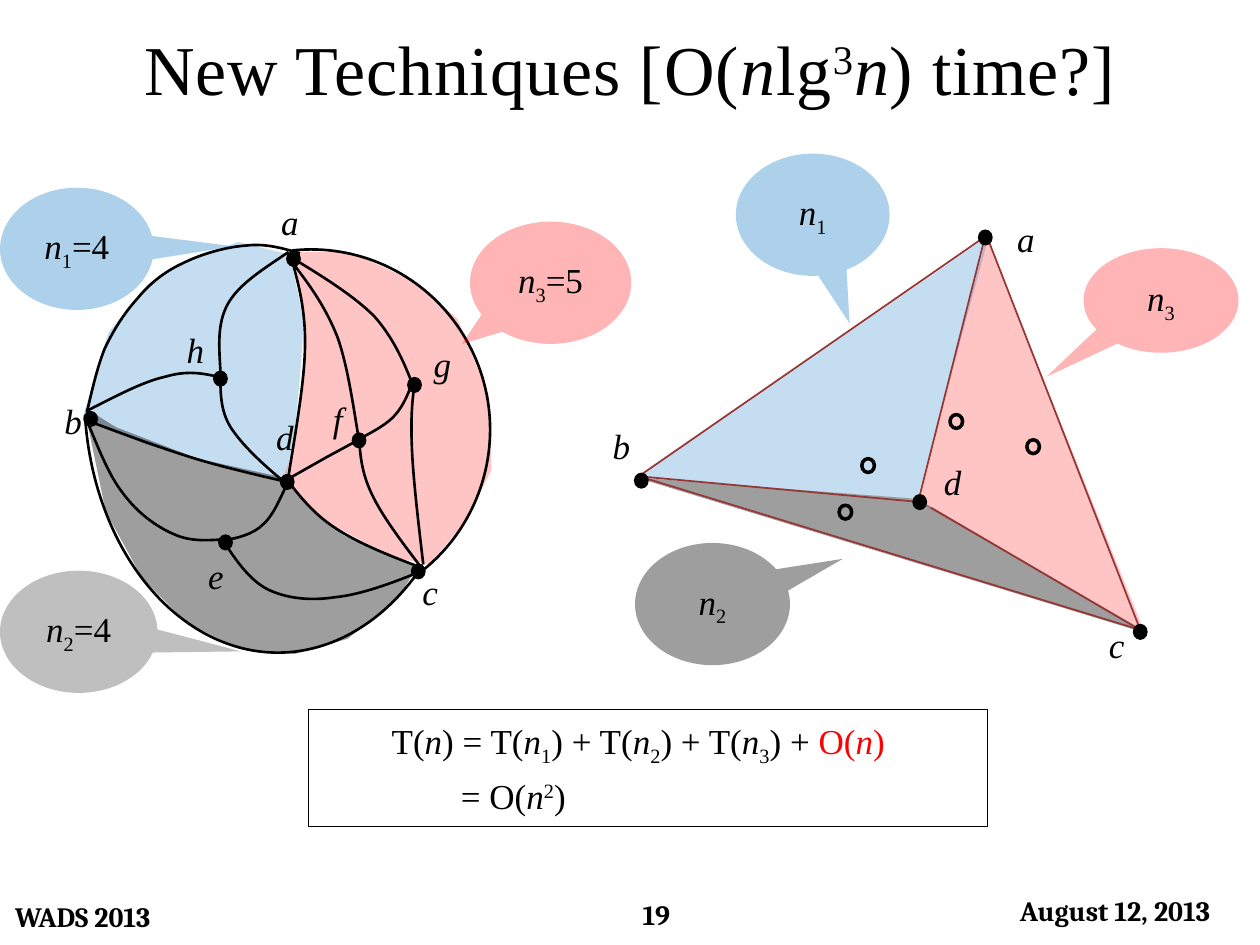
from dataclasses import dataclass
from typing import NamedTuple

from lxml import etree
from pptx import Presentation, util as u
from pptx.dml import color
from pptx.enum import shapes, text
from pptx.oxml import ns

COLORS = {"black": "000000", "red": "FF0000", "blue": "0070C0",
          "silver": "BFBFBF", "edge": "953735"}
SERIF = "Times New Roman"
DOT_WIDTH, DOT_HEIGHT = 0.1, 0.11
LABEL_SIZE = 0.19


class Run(NamedTuple):
    text: str
    italic: bool = False
    baseline: int = 0
    color: str = "black"


@dataclass
class Region:
    color: str
    opacity: int
    points: list


@dataclass
class Callout:
    box: tuple
    tail: tuple
    color: str
    opacity: int
    index: str
    count: str = ""


@dataclass
class Arc:
    box: tuple
    angles: tuple


def rgb(name: str) -> color.RGBColor:
    return color.RGBColor.from_string(COLORS[name])


def inches(values) -> list:
    return [u.Inches(value) for value in values]


def add_runs(paragraph, runs, size=20, font=SERIF, bold=False, spacing=0) -> None:
    for item in runs:
        run = paragraph.add_run()
        run.text = item.text
        run.font.size, run.font.name = u.Pt(size), font
        run.font.bold, run.font.italic = bold, item.italic
        run.font.color.rgb = rgb(item.color)
        properties = run._r.get_or_add_rPr()
        if item.baseline:
            properties.set("baseline", str(item.baseline * 1000))
        if spacing:
            properties.set("spc", str(spacing))


def variable(index: str) -> list:
    return [Run("n", True), Run(index, baseline=-25)]


def style(shape, fill=None, opacity=100, line=None, width=1.0) -> None:
    shape.shadow.inherit = False
    if fill:
        shape.fill.solid()
        shape.fill.fore_color.rgb = rgb(fill)
        if opacity < 100:
            solid = shape._element.spPr.find(ns.qn("a:solidFill"))
            etree.SubElement(solid[0], ns.qn("a:alpha"), val=str(opacity * 1000))
    else:
        shape.fill.background()
    if line:
        shape.line.color.rgb = rgb(line)
        shape.line.width = u.Pt(width)
    else:
        shape.line.fill.background()


def add_preset(slide, kind, box, **look):
    shape = slide.shapes.add_shape(kind, *inches(box))
    style(shape, **look)
    shape.text_frame.vertical_anchor = text.MSO_ANCHOR.MIDDLE
    return shape


def add_path(slide, points, closed=False, **look):
    start, *others = [inches(point) for point in points]
    builder = slide.shapes.build_freeform(*start)
    builder.add_line_segments(others, close=closed)
    shape = builder.convert_to_shape()
    style(shape, **look)
    return shape


def add_curve(slide, points) -> None:
    shape = add_path(slide, points, line="black", width=1.5)
    segments = list(shape._element.iter(ns.qn("a:lnTo")))
    for first in range(0, len(segments), 3):
        group = segments[first:first + 3]
        bezier = etree.Element(ns.qn("a:cubicBezTo"))
        group[0].addprevious(bezier)
        for segment in group:
            bezier.append(segment[0])
            segment.getparent().remove(segment)


def add_edge(slide, start, end) -> None:
    connector = slide.shapes.add_connector(
        shapes.MSO_CONNECTOR.STRAIGHT, *inches(start + end))
    connector.line.color.rgb = rgb("edge")
    connector.line.width = u.Pt(1)
    etree.SubElement(connector._element.spPr, ns.qn("a:effectLst"))


def add_dot(slide, position, hollow=False) -> None:
    add_preset(slide, shapes.MSO_SHAPE.OVAL, position + (DOT_WIDTH, DOT_HEIGHT),
               fill=None if hollow else "black", line="black",
               width=2 if hollow else 1.25)


def add_label(slide, letter, position) -> None:
    box = slide.shapes.add_textbox(*inches(position + (LABEL_SIZE, LABEL_SIZE)))
    frame = box.text_frame
    frame.word_wrap = True
    frame.vertical_anchor = text.MSO_ANCHOR.MIDDLE
    frame.paragraphs[0].alignment = text.PP_ALIGN.CENTER
    add_runs(frame.paragraphs[0], [Run(letter, True)])


def add_callout(slide, callout: Callout) -> None:
    shape = add_preset(slide, shapes.MSO_SHAPE.OVAL_CALLOUT, callout.box,
                       fill=callout.color, opacity=callout.opacity)
    shape.adjustments[0], shape.adjustments[1] = callout.tail
    paragraph = shape.text_frame.paragraphs[0]
    paragraph.alignment = text.PP_ALIGN.CENTER
    add_runs(paragraph, variable(callout.index))
    if callout.count:
        add_runs(paragraph, [Run(callout.count)])


def add_footer(slide, words, box, alignment) -> None:
    shape = add_preset(slide, shapes.MSO_SHAPE.ROUNDED_RECTANGLE, box)
    paragraph = shape.text_frame.paragraphs[0]
    paragraph.alignment = alignment
    add_runs(paragraph, [Run(words)], size=16, font="Cambria", bold=True)


A, B, C, D = (7.83, 1.87), (5.07, 3.78), (9.05, 5), (7.28, 3.96)
REGIONS = [
    Region("red", 23, [(7.28, 3.98), (9.08, 5.01), (7.83, 1.88)]),
    Region("blue", 23, [D, (5.06, 3.79), (7.85, 1.87)]),
    Region("black", 38, [D, (5.05, 3.79), (9.08, 5.02), (9.05, 4.99)]),
    Region("blue", 23, [(2.26, 3.82), (1.16, 3.53), (0.66, 3.3), (0.86, 2.64), (1.18, 2.25),
                        (1.52, 2.06), (1.89, 1.92), (2.3, 2.02), (2.41, 2.54), (2.39, 2.89),
                        (2.34, 3.43)]),
    Region("red", 23, [(2.25, 3.79), (2.54, 4.11), (3.1, 4.42), (3.41, 4.48), (3.7, 4.13),
                       (3.9, 3.73), (3.88, 3.14), (3.63, 2.53), (3.28, 2.23), (2.78, 2),
                       (2.34, 2), (2.38, 2.33), (2.43, 2.67), (2.34, 3.53)]),
    Region("black", 38, [(2.25, 3.79), (2.43, 4), (2.73, 4.25), (3.31, 4.5), (3.17, 4.73),
                         (2.76, 5.07), (2.34, 5.19), (1.9, 5.15), (1.48, 4.94), (1.13, 4.59),
                         (0.84, 4.06), (0.68, 3.29), (0.68, 3.24), (0.92, 3.39), (1.57, 3.64)]),
]
CURVES = [
    [(0.7, 3.34), (0.99, 3.45), (1.29, 3.56), (1.55, 3.64), (1.81, 3.72), (2.26, 3.82), (2.26, 3.82)],
    [(2.33, 2.11), (2.38, 2.3), (2.43, 2.5), (2.42, 2.79), (2.41, 3.08), (2.34, 3.46), (2.28, 3.84)],
    [(2.28, 3.81), (2.38, 3.94), (2.49, 4.08), (2.66, 4.19), (2.84, 4.31), (3.09, 4.41), (3.33, 4.5)],
    [(0.69, 3.27), (0.73, 3.1), (0.77, 2.92), (0.83, 2.77), (0.9, 2.62), (0.99, 2.48), (1.09, 2.37),
     (1.19, 2.25), (1.3, 2.16), (1.45, 2.09), (1.59, 2.02), (1.79, 1.96), (1.95, 1.95),
     (2.1, 1.93), (2.24, 1.97), (2.38, 2.01)],
    [(1.77, 4.29), (1.89, 4.27), (2.01, 4.24), (2.09, 4.16), (2.17, 4.09), (2.22, 3.96), (2.28, 3.84)],
    [(0.69, 3.34), (0.78, 3.55), (0.86, 3.77), (0.98, 3.92), (1.09, 4.07), (1.24, 4.18), (1.38, 4.24),
     (1.51, 4.3), (1.65, 4.29), (1.79, 4.28)],
    [(1.79, 4.32), (1.89, 4.47), (1.99, 4.61), (2.13, 4.68), (2.28, 4.75), (2.46, 4.77), (2.66, 4.74),
     (2.86, 4.72), (3.11, 4.63), (3.35, 4.53)],
    [(1.75, 2.99), (1.75, 3.12), (1.75, 3.26), (1.83, 3.39), (1.92, 3.53), (2.08, 3.68), (2.25, 3.82)],
    [(1.75, 2.95), (1.74, 2.76), (1.72, 2.57), (1.81, 2.41), (1.9, 2.25), (2.1, 2.13), (2.29, 2)],
    [(1.73, 2.99), (1.6, 2.96), (1.48, 2.94), (1.31, 2.99), (1.13, 3.03), (0.91, 3.15), (0.69, 3.26)],
    [(2.34, 2.11), (2.47, 2.28), (2.59, 2.45), (2.68, 2.68), (2.76, 2.91), (2.8, 3.2), (2.85, 3.5)],
    [(2.85, 3.48), (2.86, 3.62), (2.87, 3.75), (2.95, 3.92), (3.03, 4.09), (3.18, 4.29), (3.34, 4.5)],
    [(3.27, 3.04), (3.2, 2.86), (3.12, 2.68), (2.97, 2.51), (2.81, 2.35), (2.57, 2.2), (2.34, 2.06)],
    [(2.86, 3.48), (2.97, 3.42), (3.07, 3.37), (3.14, 3.29), (3.2, 3.22), (3.24, 3.13), (3.27, 3.04)],
    [(3.29, 3.06), (3.27, 3.19), (3.26, 3.33), (3.27, 3.56), (3.28, 3.8), (3.32, 4.14), (3.36, 4.48)],
]
ARCS = [Arc((1.05, 1.98, 2.84, 2.86), (158.4, 32.04)),
        Arc((0.67, 1.08, 3.07, 4.1), (31.96, 104.21))]
EDGES = [(B, (7.25, 3.98)), (C, (7.39, 4.03)), ((7.3, 3.93), (7.83, 1.83))]
DOTS = [(3.27, 4.48), (1.74, 4.25), (2.23, 3.77), (2.28, 2), (0.67, 3.27), (2.8, 3.44), (3.24, 3),
        (1.7, 2.95), (5.04, 3.76), (7.77, 1.83), (9, 4.96), (7.25, 3.93)]
RINGS = [(6.84, 3.64), (8.15, 3.49), (6.66, 4.01), (7.54, 3.29)]
LABELS = [("a", (2.14, 1.66)), ("b", (0.42, 3.24)), ("c", (3.26, 4.6)), ("d", (2.1, 3.37)),
          ("e", (1.56, 4.47)), ("f", (2.55, 3.23)), ("g", (3.35, 2.79)), ("h", (1.39, 2.68)),
          ("a", (7.98, 1.8)), ("b", (4.77, 3.44)), ("c", (8.71, 5.02)), ("d", (7.4, 3.73))]
CALLOUTS = [
    Callout((5.84, 1.22, 1.22, 0.97), (0.24, 0.89), "blue", 32, "1"),
    Callout((5.04, 4.31, 1.23, 0.97), (0.84, -0.37), "black", 38, "2"),
    Callout((8.6, 1.97, 1.23, 0.83), (-0.74, 0.73), "red", 29, "3"),
    Callout((0, 1.49, 1.22, 0.97), (1.02, -0.02), "blue", 32, "1", "=4"),
    Callout((0, 4.53, 1.25, 0.97), (1.03, 0.16), "silver", 100, "2", "=4"),
    Callout((3.73, 1.76, 1.28, 0.97), (-0.55, 0.5), "red", 29, "3", "=5"),
]
FOOTERS = [("19", (4.18, 7.08, 2.06, 0.35), text.PP_ALIGN.CENTER),
           ("WADS 2013", (0, 7.05, 3.97, 0.45), text.PP_ALIGN.LEFT),
           ("August 12, 2013", (7.7, 7.05, 2.3, 0.35), text.PP_ALIGN.CENTER)]
TITLE = [Run("New Techniques [O("), Run("n", True), Run("lg"), Run("3", baseline=30),
         Run("n", True), Run(") time?]")]
RECURRENCE = [
    (0.56, [Run("T("), Run("n", True), Run(") = T("), *variable("1"), Run(") + T("), *variable("2"),
            Run(") + T("), *variable("3"), Run(") +"), Run(" O(", color="red"),
            Run("n", True, color="red"), Run(")", color="red")]),
    (1.11, [Run("= O("), Run("n", True), Run("2", baseline=30), Run(")")]),
]


def add_title(slide) -> None:
    title = slide.shapes.title
    title.left, title.top, title.width, title.height = inches((0, 0.15, 10, 0.77))
    title.text_frame.vertical_anchor = text.MSO_ANCHOR.MIDDLE
    title.text_frame.paragraphs[0].alignment = text.PP_ALIGN.CENTER
    add_runs(title.text_frame.paragraphs[0], TITLE, size=40, spacing=50)


def add_recurrence(slide) -> None:
    box = add_preset(slide, shapes.MSO_SHAPE.RECTANGLE, (2.45, 5.63, 5.39, 0.93),
                     line="black", width=0.75)
    frame = box.text_frame
    for number, (indent, runs) in enumerate(RECURRENCE):
        paragraph = frame.add_paragraph() if number else frame.paragraphs[0]
        paragraph.alignment = text.PP_ALIGN.LEFT
        paragraph.space_before = u.Pt(4)
        paragraph._p.get_or_add_pPr().set("marL", str(u.Inches(indent)))
        add_runs(paragraph, runs)


def main() -> None:
    presentation = Presentation()
    presentation.slide_width, presentation.slide_height = inches((10, 7.5))
    slide = presentation.slides.add_slide(presentation.slide_layouts[5])
    add_title(slide)
    for footer in FOOTERS:
        add_footer(slide, *footer)
    for region in REGIONS:
        add_path(slide, region.points, True, fill=region.color, opacity=region.opacity)
    for curve in CURVES:
        add_curve(slide, curve)
    add_path(slide, [(2.29, 3.8), (2.59, 3.63), (2.83, 3.5)], line="black", width=1.5)
    for arc in ARCS:
        shape = add_preset(slide, shapes.MSO_SHAPE.ARC, arc.box, line="black", width=1.5)
        shape.adjustments[0], shape.adjustments[1] = arc.angles
    add_path(slide, [B, A, C], True, line="edge")
    for edge in EDGES:
        add_edge(slide, *edge)
    for dot in DOTS:
        add_dot(slide, dot)
    for ring in RINGS:
        add_dot(slide, ring, hollow=True)
    for label in LABELS:
        add_label(slide, *label)
    for callout in CALLOUTS:
        add_callout(slide, callout)
    add_recurrence(slide)
    presentation.save("out.pptx")


if __name__ == "__main__":
    main()
